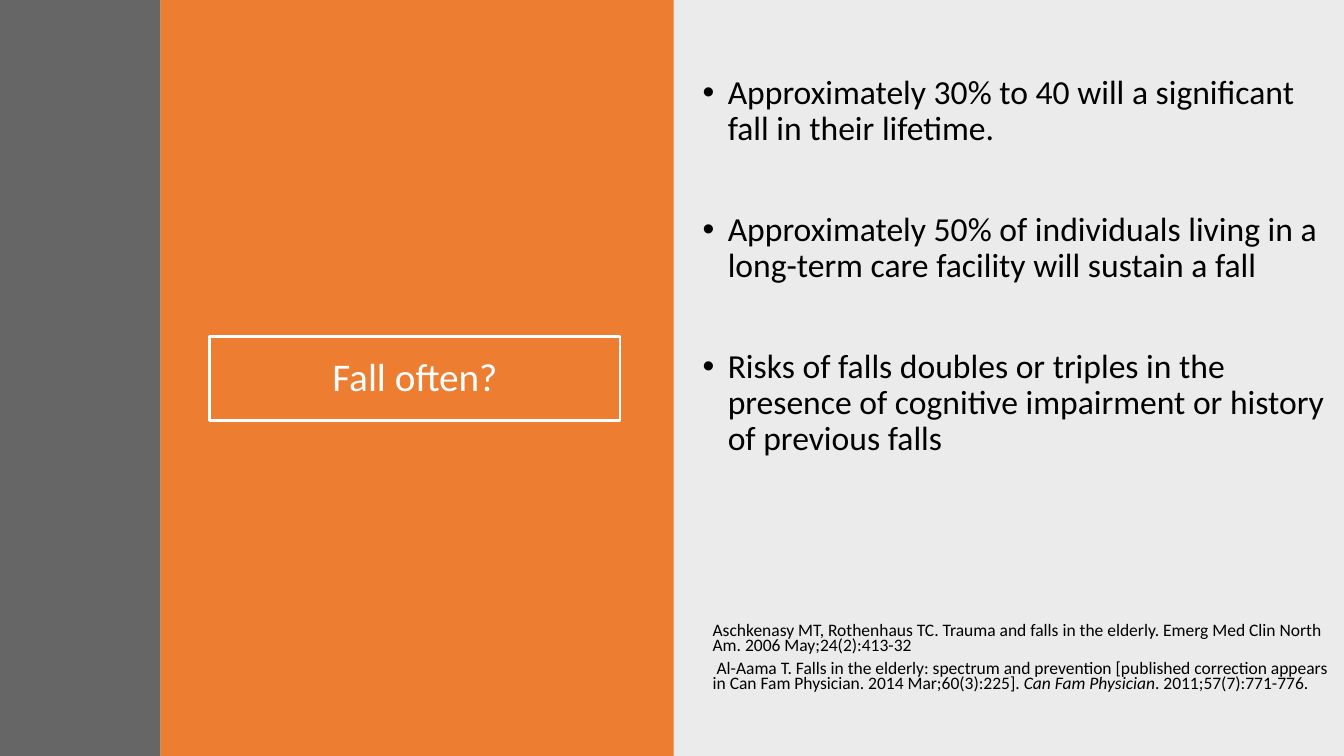
from lxml import etree
from pptx import Presentation
from pptx.dml.color import RGBColor
from pptx.enum.shapes import MSO_SHAPE
from pptx.enum.text import MSO_ANCHOR, PP_ALIGN
from pptx.oxml.ns import qn
from pptx.util import Inches, Pt

RECTANGLE = MSO_SHAPE.RECTANGLE
MIDDLE = MSO_ANCHOR.MIDDLE
CENTER = PP_ALIGN.CENTER

BLACK = RGBColor(0x00, 0x00, 0x00)
WHITE = RGBColor(0xFF, 0xFF, 0xFF)
LIGHT_GRAY = RGBColor(0xEB, 0xEB, 0xEB)
DARK_GRAY = RGBColor(0x66, 0x66, 0x66)
ORANGE = RGBColor(0xED, 0x7D, 0x31)

FACTS = [
    "Approximately 30% to 40 will a significant fall in their lifetime.",
    "Approximately 50% of individuals living in a long-term care facility will sustain a fall",
    "Risks of falls doubles or triples in the presence of cognitive impairment or history of previous falls",
]
# Each reference is a list of (text, italic) runs
REFERENCES = [
    [("Aschkenasy MT, Rothenhaus TC. Trauma and falls in the elderly. "
      "Emerg Med Clin North Am. 2006 May;24(2):413-32", False)],
    [(" Al-Aama T. Falls in the elderly: spectrum and prevention [published correction appears "
      "in Can Fam Physician. 2014 Mar;60(3):225]. ", False),
     ("Can Fam Physician", True),
     (". 2011;57(7):771-776.", False)],
]


def style_paragraph(paragraph, size, color, line_spacing):
    paragraph.font.name = "Calibri"
    paragraph.font.size = Pt(size)
    paragraph.font.color.rgb = color
    paragraph.line_spacing = line_spacing


def add_text_frame(left, top, width, height):
    text_frame = slide.shapes.add_textbox(
        Inches(left), Inches(top), Inches(width), Inches(height)).text_frame
    text_frame.word_wrap = True
    return text_frame


presentation = Presentation()
presentation.slide_width = Inches(13.33)
presentation.slide_height = Inches(7.5)
slide = presentation.slides.add_slide(presentation.slide_layouts[6])

# Full-height background panels
for left, width, color in [(6.67, 6.66, LIGHT_GRAY), (1.59, 5.09, ORANGE), (0, 1.59, DARK_GRAY)]:
    panel = slide.shapes.add_shape(
        RECTANGLE, Inches(left), 0, Inches(width), presentation.slide_height)
    panel.shadow.inherit = False
    panel.fill.solid()
    panel.fill.fore_color.rgb = color
    panel.line.fill.background()

# Framed title
title = slide.shapes.add_shape(RECTANGLE, Inches(2.08), Inches(3.34), Inches(4.07), Inches(0.83))
title.shadow.inherit = False
title.fill.background()
title.line.color.rgb = WHITE
title.line.width = Pt(2)
title.text_frame.word_wrap = True
title.text_frame.vertical_anchor = MIDDLE
title_paragraph = title.text_frame.paragraphs[0]
title_paragraph.text = "Fall often?"
title_paragraph.alignment = CENTER
style_paragraph(title_paragraph, 28, WHITE, 0.9)

# Bulleted facts
facts_frame = add_text_frame(6.87, 0.7, 6.37, 4.83)
for index, fact in enumerate(FACTS):
    paragraph = facts_frame.add_paragraph() if index else facts_frame.paragraphs[0]
    paragraph.text = fact
    style_paragraph(paragraph, 24, BLACK, 0.9)
    paragraph.space_before = Pt(46 if index else 0)
    properties = paragraph._p.get_or_add_pPr()
    properties.set("marL", str(Inches(0.25)))
    properties.set("indent", str(-Inches(0.25)))
    bullet_font = etree.Element(qn("a:buFont"), typeface="Arial")
    bullet = etree.Element(qn("a:buChar"), char="•")
    properties.find(qn("a:defRPr")).addprevious(bullet_font)
    bullet_font.addnext(bullet)

# References
references_frame = add_text_frame(6.97, 6.15, 6.36, 1.08)
for index, runs in enumerate(REFERENCES):
    paragraph = references_frame.add_paragraph() if index else references_frame.paragraphs[0]
    style_paragraph(paragraph, 12.5, BLACK, 0.7)
    paragraph.space_after = Pt(6)
    for text, italic in runs:
        run = paragraph.add_run()
        run.text = text
        run.font.italic = italic

presentation.save("out.pptx")
